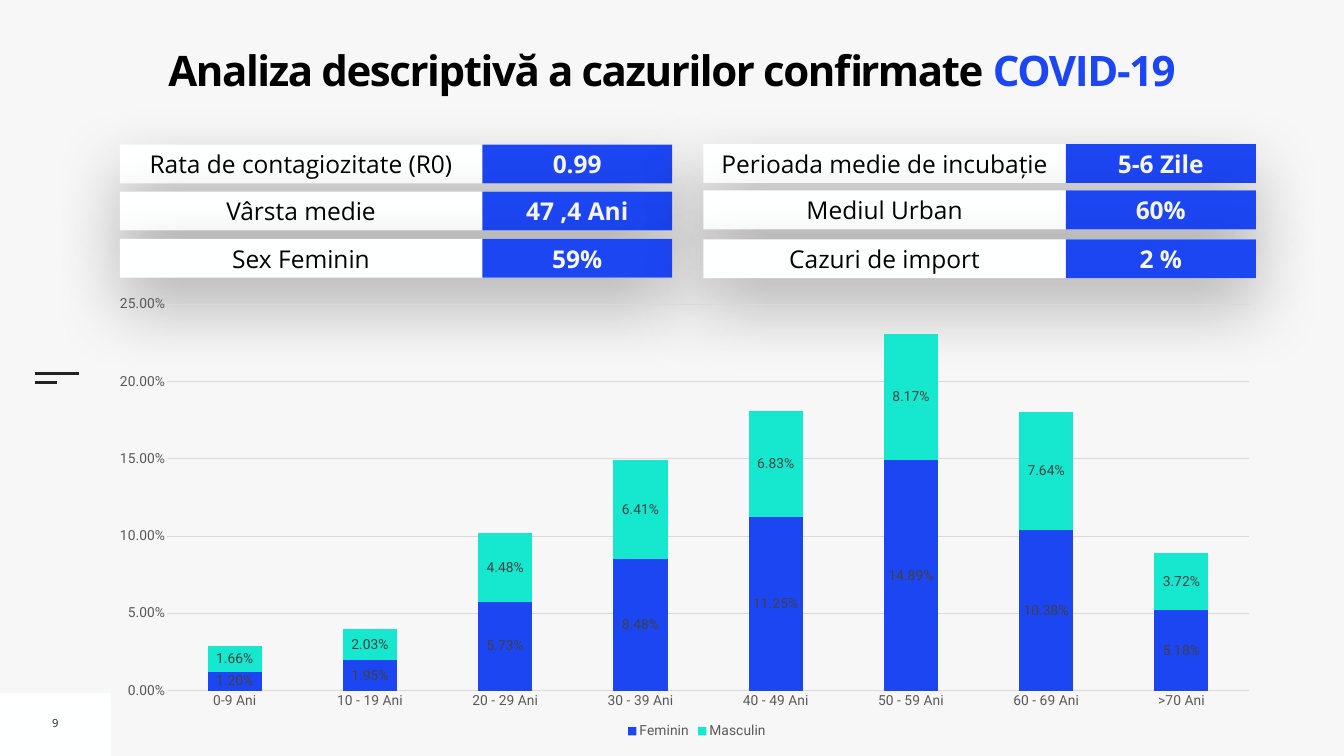
from lxml import etree
from pptx import Presentation
from pptx.chart.data import CategoryChartData
from pptx.dml.color import RGBColor
from pptx.enum import chart as charts, shapes, text
from pptx.oxml import parse_xml
from pptx.oxml.ns import nsdecls, qn
from pptx.util import Inches, Pt

BACKGROUND = RGBColor(0xF7, 0xF7, 0xF7)
WHITE = RGBColor(0xFE, 0xFF, 0xFF)
BLACK = RGBColor(0x00, 0x00, 0x00)
DARK = RGBColor(0x22, 0x22, 0x22)
BLUE = RGBColor(0x1D, 0x46, 0xF3)
TEAL = RGBColor(0x16, 0xE7, 0xCF)
AXIS_TEXT = RGBColor(0x59, 0x59, 0x59)
LABEL_TEXT = RGBColor(0x40, 0x40, 0x40)
GRID = RGBColor(0xD9, 0xD9, 0xD9)

LEFT_COLUMN, RIGHT_COLUMN = 2.38, 13.96
INDICATORS = [
    (LEFT_COLUMN, 2.87, "Rata de contagiozitate (R0)", "0.99"),
    (LEFT_COLUMN, 3.8, "Vârsta medie", "47 ,4 Ani"),
    (RIGHT_COLUMN, 2.86, "Perioada medie de incubație", "5-6 Zile"),
    (RIGHT_COLUMN, 3.78, "Mediul Urban", "60%"),
    (LEFT_COLUMN, 4.74, "Sex Feminin", "59%"),
    (RIGHT_COLUMN, 4.75, "Cazuri de import", "2 %"),
]
AGE_GROUPS = ["0-9 Ani", "10 - 19 Ani", "20 - 29 Ani", "30 - 39 Ani",
              "40 - 49 Ani", "50 - 59 Ani", "60 - 69 Ani", ">70 Ani"]
SERIES = [
    ("Feminin", BLUE, [0.012, 0.0195, 0.0573, 0.0848, 0.1125, 0.1489, 0.1038, 0.0518]),
    ("Masculin", TEAL, [0.0166, 0.0203, 0.0448, 0.0641, 0.0683, 0.0817, 0.0764, 0.0372]),
]


def set_font(font, size, color, name="Open Sans", bold=False):
    font.size = Pt(size)
    font.name = name
    font.bold = bold
    font.color.rgb = color


def add_run(paragraph, words, size, color, bold=False):
    run = paragraph.add_run()
    run.text = words
    set_font(run.font, size, color, bold=bold)
    return run


def add_rectangle(parent, left, top, width, height, color):
    shape = parent.add_shape(shapes.MSO_SHAPE.RECTANGLE, Inches(left), Inches(top),
                             Inches(width), Inches(height))
    shape.shadow.inherit = False
    shape.fill.solid()
    shape.fill.fore_color.rgb = color
    shape.line.fill.background()
    return shape


def add_label(parent, left, top, width, height, words, size, color, bold=False, wrap=True):
    box = parent.add_textbox(Inches(left), Inches(top), Inches(width), Inches(height))
    frame = box.text_frame
    frame.word_wrap = wrap
    frame.vertical_anchor = text.MSO_ANCHOR.MIDDLE
    frame.margin_left = frame.margin_right = Inches(0.1)
    frame.margin_top = frame.margin_bottom = Inches(0.1)
    paragraph = frame.paragraphs[0]
    paragraph.alignment = text.PP_ALIGN.CENTER
    add_run(paragraph, words, size, color, bold)


def add_soft_shadow(shape):
    effects = shape._element.spPr.find(qn("a:effectLst"))
    effects.append(parse_xml(
        f'<a:outerShdw {nsdecls("a")} blurRad="{Pt(100)}" dist="{Pt(40)}" dir="5400000" '
        'rotWithShape="0"><a:srgbClr val="000000"><a:alpha val="30000"/></a:srgbClr>'
        '</a:outerShdw>'))


def add_title(slide, left, top, width, height):
    title = slide.shapes.title
    title.left, title.top = Inches(left), Inches(top)
    title.width, title.height = Inches(width), Inches(height)
    frame = title.text_frame
    frame.word_wrap = True
    frame.auto_size = text.MSO_AUTO_SIZE.NONE
    frame.vertical_anchor = text.MSO_ANCHOR.TOP
    frame.margin_left = frame.margin_right = frame.margin_top = frame.margin_bottom = 0
    paragraph = frame.paragraphs[0]
    paragraph.alignment = text.PP_ALIGN.CENTER
    paragraph.line_spacing = 1.0
    for words, color in (("Analiza descriptivă a cazurilor confirmate ", BLACK),
                         ("COVID-19", BLUE)):
        run = add_run(paragraph, words, 60, color, bold=True)
        run.font._element.set("spc", "-200")


def add_page_number(slide, left, top, width, height):
    add_rectangle(slide.shapes, left, top, width, height, WHITE)
    add_label(slide.shapes, left + 0.93, top + 0.33, 0.34, 0.51, "9", 16, DARK, wrap=False)


def add_side_mark(slide, left, top):
    for offset, length in ((0, 0.88), (0.18, 0.44)):
        y = Inches(top + offset)
        line = slide.shapes.add_connector(shapes.MSO_CONNECTOR.STRAIGHT, Inches(left), y,
                                          Inches(left + length), y)
        line.line.color.rgb = DARK
        line.line.width = Pt(3)
        etree.SubElement(line._element.spPr, qn("a:effectLst"))


def add_indicator(slide, left, top, caption, value):
    parent = slide.shapes.add_group_shape().shapes
    add_soft_shadow(add_rectangle(parent, left, top, 10.96, 0.77, WHITE))
    add_label(parent, left + 0.16, top - 0.01, 6.87, 0.79, caption, 35, BLACK)
    add_rectangle(parent, left + 7.19, top, 3.77, 0.77, BLUE)
    add_label(parent, left + 7.19, top - 0.01, 3.77, 0.79, value, 35, BACKGROUND, bold=True)


def set_plot_area(chart, x, y, width, height):
    plot_area = chart._chartSpace.chart.plotArea
    for layout in plot_area.findall(qn("c:layout")):
        plot_area.remove(layout)
    plot_area.insert(0, parse_xml(
        f'<c:layout {nsdecls("c")}><c:manualLayout><c:layoutTarget val="inner"/>'
        '<c:xMode val="edge"/><c:yMode val="edge"/>'
        f'<c:x val="{x}"/><c:y val="{y}"/><c:w val="{width}"/><c:h val="{height}"/>'
        '</c:manualLayout></c:layout>'))


def add_age_chart(slide, left, top, width, height):
    data = CategoryChartData(number_format="0.00%")
    data.categories = AGE_GROUPS
    for name, _, values in SERIES:
        data.add_series(name, values)
    chart = slide.shapes.add_chart(charts.XL_CHART_TYPE.COLUMN_STACKED, Inches(left), Inches(top),
                                   Inches(width), Inches(height), data).chart
    set_font(chart.font, 20, BLACK, "Roboto")
    chart.has_title = False
    chart.has_legend = True
    chart.legend.position = charts.XL_LEGEND_POSITION.BOTTOM
    chart.legend.include_in_layout = False
    set_font(chart.legend.font, 20, AXIS_TEXT, "Roboto")

    for axis in (chart.category_axis, chart.value_axis):
        axis.major_tick_mark = axis.minor_tick_mark = charts.XL_TICK_MARK.NONE
        set_font(axis.tick_labels.font, 20, AXIS_TEXT, "Roboto")
    chart.value_axis.minimum_scale = 0
    chart.value_axis.maximum_scale = 0.25
    chart.value_axis.major_unit = 0.05
    chart.value_axis.tick_labels.number_format = "0.00%"
    chart.value_axis.tick_labels.number_format_is_linked = False
    chart.value_axis.format.line.fill.background()
    for line in (chart.category_axis.format.line, chart.value_axis.major_gridlines.format.line):
        line.color.rgb = GRID
        line.width = Pt(0.75)

    plot = chart.plots[0]
    plot.gap_width = 150
    plot.overlap = 100
    plot.vary_by_categories = False
    for series, (_, color, _) in zip(plot.series, SERIES):
        series.format.fill.solid()
        series.format.fill.fore_color.rgb = color
        labels = series.data_labels
        labels.show_value = True
        labels.number_format = "0.00%"
        labels.number_format_is_linked = False
        set_font(labels.font, 20, LABEL_TEXT, "Roboto")
    set_plot_area(chart, 0.026, 0.01, 0.968, 0.873)


def main():
    presentation = Presentation()
    presentation.slide_width, presentation.slide_height = Inches(26.67), Inches(15)
    slide = presentation.slides.add_slide(presentation.slide_layouts[5])
    slide.background.fill.solid()
    slide.background.fill.fore_color.rgb = BACKGROUND
    add_page_number(slide, 0, 13.76, 2.2, 1.24)
    add_side_mark(slide, 0.69, 7.41)
    add_title(slide, 0, 0.89, 26.67, 1.58)
    for indicator in INDICATORS:
        add_indicator(slide, *indicator)
    add_age_chart(slide, LEFT_COLUMN, 5.87, 22.54, 8.86)
    presentation.save("out.pptx")


if __name__ == "__main__":
    main()
